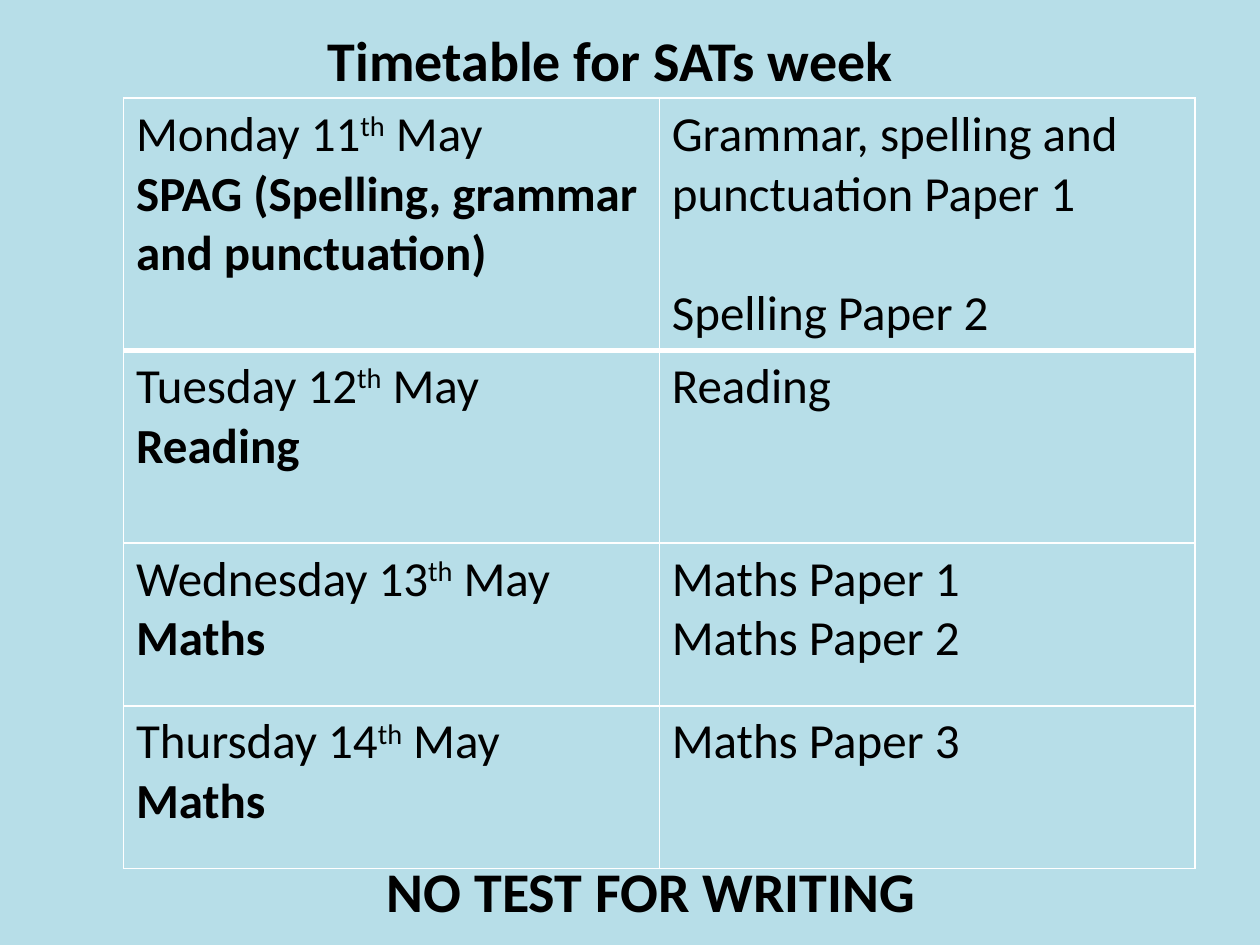
from lxml.etree import SubElement
from pptx import Presentation
from pptx.dml.color import RGBColor
from pptx.enum.text import PP_ALIGN
from pptx.oxml.ns import qn
from pptx.util import Cm, Pt

THEME = {
    "font": "Calibri",
    "sky": RGBColor.from_string("B7DEE8"),
    "ink": RGBColor.from_string("000000"),
    "line": "FFFFFF",
    "head": 32,
    "body": 28,
}

# day, date, subject, papers, row height in cm
DAYS = [
    ("Monday", 11, "SPAG (Spelling, grammar and punctuation)",
     ["Grammar, spelling and punctuation Paper 1", "Spelling Paper 2"], 5.08),
    ("Tuesday", 12, "Reading", ["Reading"], 3.89),
    ("Wednesday", 13, "Maths", ["Maths Paper 1", "Maths Paper 2"], 3.28),
    ("Thursday", 14, "Maths", ["Maths Paper 3"], 3.28),
]
# text, left, top, width in cm
HEADS = [
    ("Timetable for SATs week", 6.3, 0.38, 12.01),
    ("NO TEST FOR WRITING", 7.49, 17.15, 11.28),
]
LEFT, TOP, COL = 2.49, 1.98, 10.8
PAPER_GAP = 34  # points between Monday's two papers


def add_run(para, text, size, bold=False, raised=False):
    run = para.add_run()
    run.text = text
    font = run.font
    font.name, font.size, font.bold = THEME["font"], Pt(size), bold
    font.color.rgb = THEME["ink"]
    if raised:
        run._r.get_or_add_rPr().set("baseline", "30000")


def add_head(slide, text, left, top, width):
    box = slide.shapes.add_textbox(Cm(left), Cm(top), Cm(width), Cm(1.63))
    frame = box.text_frame
    frame.word_wrap = False
    para = frame.paragraphs[0]
    para.alignment = PP_ALIGN.CENTER
    add_run(para, text, THEME["head"], bold=True)


def style_cell(cell, top, base):
    """Draw the cell's borders, with top and base widths in points, then fill it."""
    props = cell._tc.get_or_add_tcPr()
    for side, width in (("L", 1), ("R", 1), ("T", top), ("B", base)):
        edge = SubElement(props, qn(f"a:ln{side}"), w=str(Pt(width)))
        fill = SubElement(edge, qn("a:solidFill"))
        SubElement(fill, qn("a:srgbClr"), val=THEME["line"])
    cell.fill.solid()
    cell.fill.fore_color.rgb = THEME["sky"]


def fill_day(cell, day, date, subject):
    frame, size = cell.text_frame, THEME["body"]
    para = frame.paragraphs[0]
    add_run(para, f"{day} {date}", size)
    add_run(para, "th", size, raised=True)
    add_run(para, " May", size)
    add_run(frame.add_paragraph(), subject, size, bold=True)


def fill_papers(cell, papers, gap):
    frame = cell.text_frame
    for i, paper in enumerate(papers):
        para = frame.add_paragraph() if i else frame.paragraphs[0]
        para.space_before = Pt(gap if i else 0)
        add_run(para, paper, THEME["body"])


def add_days(slide):
    high = sum(day[-1] for day in DAYS)
    table = slide.shapes.add_table(
        len(DAYS), 2, Cm(LEFT), Cm(TOP), Cm(2 * COL), Cm(high)).table
    table.first_row = table.horz_banding = False
    for col in table.columns:
        col.width = Cm(COL)
    for i, (day, date, subject, papers, height) in enumerate(DAYS):
        table.rows[i].height = Cm(height)
        for j in range(2):
            style_cell(table.cell(i, j), 3 if i == 1 else 1, 3 if i == 0 else 1)
        fill_day(table.cell(i, 0), day, date, subject)
        fill_papers(table.cell(i, 1), papers, 0 if i else PAPER_GAP)


def main():
    deck = Presentation()
    deck.slide_width, deck.slide_height = Cm(25.4), Cm(19.05)
    slide = deck.slides.add_slide(deck.slide_layouts[6])
    slide.background.fill.solid()
    slide.background.fill.fore_color.rgb = THEME["sky"]
    add_days(slide)
    for head in HEADS:
        add_head(slide, *head)
    deck.save("out.pptx")


if __name__ == "__main__":
    main()
